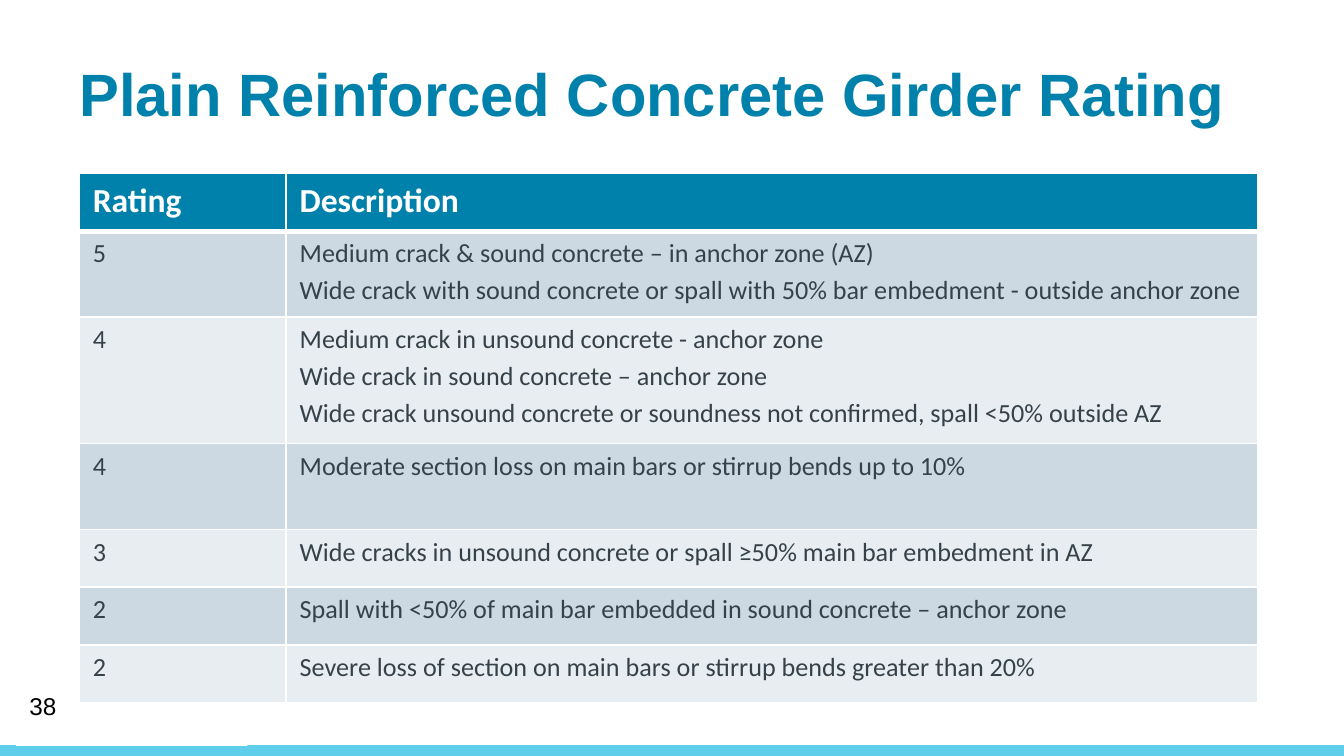
from lxml import etree
from pptx import Presentation
from pptx.dml.color import RGBColor
from pptx.enum.shapes import MSO_SHAPE
from pptx.enum.text import MSO_ANCHOR
from pptx.oxml.ns import qn
from pptx.util import Inches, Pt

RECTANGLE = MSO_SHAPE.RECTANGLE
TOP, MIDDLE = MSO_ANCHOR.TOP, MSO_ANCHOR.MIDDLE

SLIDE_WIDTH = 10
SLIDE_HEIGHT = SLIDE_WIDTH * 9 / 16

TITLE_FORMAT = {"name": "Arial", "size": Pt(32), "bold": True, "color": "0081AB"}
NUMBER_FORMAT = {"name": "Arial", "size": Pt(13), "bold": False, "color": "000000"}
HEADER_FORMAT = {"name": "Calibri", "size": Pt(18), "bold": True, "color": "FFFFFF"}
BODY_FORMAT = {"name": "Calibri", "size": Pt(14), "bold": False, "color": "36424A"}

HEADER_FILL = "0081AB"
BAND_FILLS = ["CCD8E2", "E7EDF1"]
COLUMN_WIDTHS = [1.54, 7.23]
ROW_HEIGHTS = [0.43, 0.64, 0.94, 0.64, 0.43, 0.43, 0.43]
LINE_GAP = Pt(2.8)

RATINGS = [
    ("5", ["Medium crack & sound concrete – in anchor zone (AZ)",
           "Wide crack with sound concrete or spall with 50% bar embedment - outside anchor zone"]),
    ("4", ["Medium crack in unsound concrete - anchor zone",
           "Wide crack in sound concrete – anchor zone",
           "Wide crack unsound concrete or soundness not confirmed, spall <50% outside AZ"]),
    ("4", ["Moderate section loss on main bars or stirrup bends up to 10%"]),
    ("3", ["Wide cracks in unsound concrete or spall ≥50% main bar embedment in AZ"]),
    ("2", ["Spall with <50% of main bar embedded in sound concrete – anchor zone"]),
    ("2", ["Severe loss of section on main bars or stirrup bends greater than 20%"]),
]


def rgb(color):
    return RGBColor.from_string(color)


def write_lines(text_frame, lines, text_format):
    """Write one paragraph per line, with a gap before all but the first."""
    for index, line in enumerate(lines):
        paragraph = text_frame.add_paragraph() if index else text_frame.paragraphs[0]
        if index:
            paragraph.space_before = LINE_GAP
        run = paragraph.add_run()
        run.text = line
        for attribute, value in text_format.items():
            if attribute == "color":
                run.font.color.rgb = rgb(value)
            else:
                setattr(run.font, attribute, value)


def add_rectangle(slide, left, top, width, height, color):
    shape = slide.shapes.add_shape(
        RECTANGLE, Inches(left), Inches(top), Inches(width), Inches(height))
    shape.shadow.inherit = False
    shape.fill.solid()
    shape.fill.fore_color.rgb = rgb(color)
    shape.line.fill.background()


def add_text(slide, left, top, width, height, text, text_format, anchor, **margins):
    box = slide.shapes.add_textbox(
        Inches(left), Inches(top), Inches(width), Inches(height))
    text_frame = box.text_frame
    text_frame.word_wrap = True
    text_frame.vertical_anchor = anchor
    for name, value in margins.items():
        setattr(text_frame, name, Inches(value))
    write_lines(text_frame, [text], text_format)


def set_borders(cell, top_width, bottom_width):
    """Draw white borders; python-pptx has no public method for them."""
    properties = cell._tc.get_or_add_tcPr()
    widths = {"a:lnL": 1, "a:lnR": 1, "a:lnT": top_width, "a:lnB": bottom_width}
    for tag, width in widths.items():
        line = etree.SubElement(properties, qn(tag), w=str(Pt(width)))
        fill = etree.SubElement(line, qn("a:solidFill"))
        etree.SubElement(fill, qn("a:srgbClr"), val="FFFFFF")


def add_rating_table(slide, left, top):
    rows = [("Rating", ["Description"])] + RATINGS
    table = slide.shapes.add_table(
        len(rows), len(COLUMN_WIDTHS), Inches(left), Inches(top),
        Inches(sum(COLUMN_WIDTHS)), Inches(sum(ROW_HEIGHTS))).table
    for column, width in zip(table.columns, COLUMN_WIDTHS):
        column.width = Inches(width)
    for index, (rating, description) in enumerate(rows):
        table.rows[index].height = Inches(ROW_HEIGHTS[index])
        is_header = index == 0
        color = HEADER_FILL if is_header else BAND_FILLS[(index - 1) % 2]
        text_format = HEADER_FORMAT if is_header else BODY_FORMAT
        for cell, lines in zip(table.rows[index].cells, ([rating], description)):
            set_borders(cell, 3 if index == 1 else 1, 3 if is_header else 1)
            cell.fill.solid()
            cell.fill.fore_color.rgb = rgb(color)
            write_lines(cell.text_frame, lines, text_format)


def main():
    presentation = Presentation()
    presentation.slide_width = Inches(SLIDE_WIDTH)
    presentation.slide_height = Inches(SLIDE_HEIGHT)
    slide = presentation.slides.add_slide(presentation.slide_layouts[6])

    add_rectangle(slide, 0, SLIDE_HEIGHT - 0.08, SLIDE_WIDTH, 0.08, "5FCEEA")
    add_rectangle(slide, 0.12, 5.42, 1.72, 0.13, "FFFFFF")
    add_text(slide, 0.12, 5.1, 2.25, 0.3, "38", NUMBER_FORMAT, MIDDLE)
    add_text(slide, 0.59, 0.37, 8.99, 0.57, "Plain Reinforced Concrete Girder Rating",
             TITLE_FORMAT, TOP, margin_left=0)
    add_rating_table(slide, 0.59, 1.29)

    presentation.save("out.pptx")


if __name__ == "__main__":
    main()
